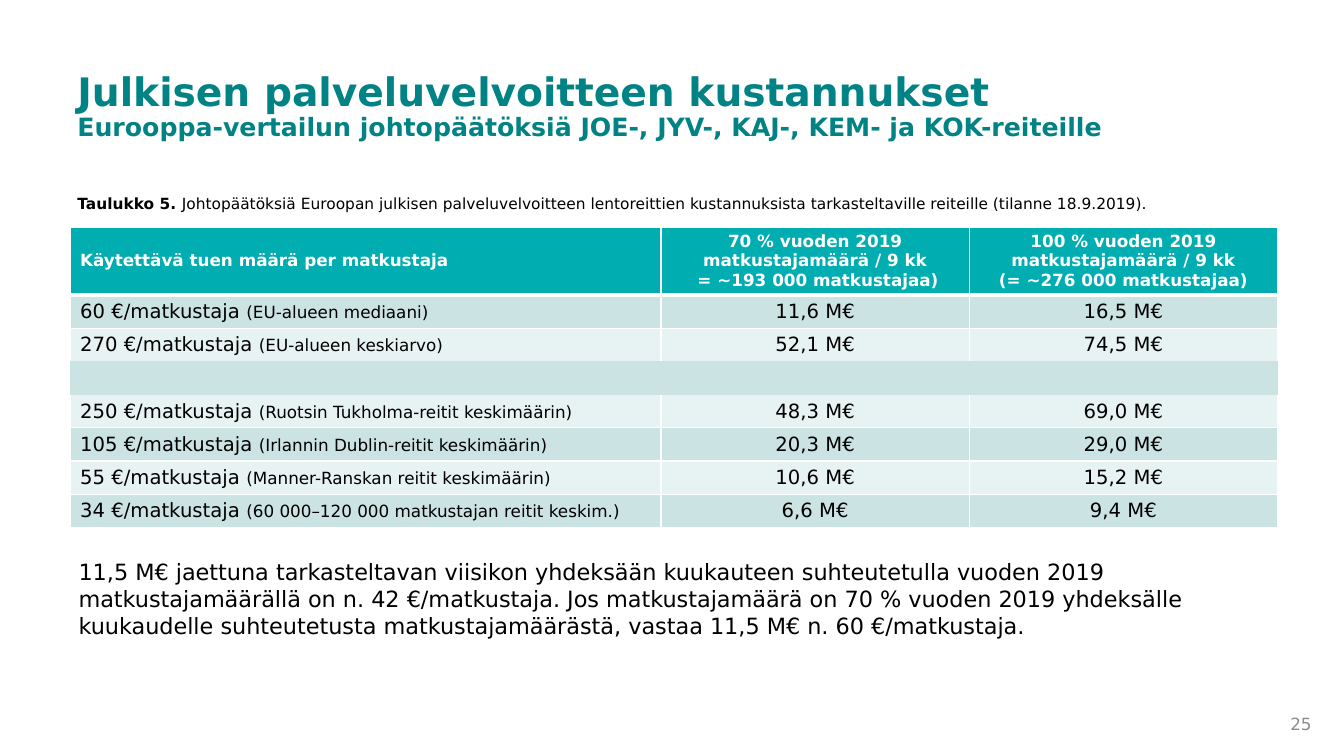
from dataclasses import dataclass

from lxml import etree
from pptx import Presentation
from pptx import util as u
from pptx.dml.color import RGBColor
from pptx.enum import text as t
from pptx.oxml import ns

Pt = u.Pt
FONT = "DejaVu Sans"
DARK = RGBColor(0x01, 0x82, 0x85)
TEAL = RGBColor(0x00, 0xAE, 0xB2)
BAND = RGBColor(0xCC, 0xE3, 0xE4)
PALE = RGBColor(0xE7, 0xF2, 0xF2)
WHITE = RGBColor(0xFF, 0xFF, 0xFF)
BLACK = RGBColor(0x00, 0x00, 0x00)
GREY = RGBColor(0x8C, 0x8C, 0x8C)
LEFT, MID, RIGHT = t.PP_ALIGN.LEFT, t.PP_ALIGN.CENTER, t.PP_ALIGN.RIGHT


@dataclass
class Line:
    rate: str = ""
    note: str = ""
    low: str = ""
    full: str = ""


HEADS = (
    "Käytettävä tuen määrä per matkustaja",
    "70 % vuoden 2019 matkustajamäärä / 9 kk\n = ~193 000 matkustajaa)",
    "100 % vuoden 2019 matkustajamäärä / 9 kk\n(= ~276 000 matkustajaa)",
)
LINES = (
    Line("60 €/matkustaja ", "(EU-alueen mediaani)", "11,6 M€", "16,5 M€"),
    Line("270 €/matkustaja ", "(EU-alueen keskiarvo)", "52,1 M€", "74,5 M€"),
    Line(),
    Line("250 €/matkustaja ", "(Ruotsin Tukholma-reitit keskimäärin)", "48,3 M€", "69,0 M€"),
    Line("105 €/matkustaja ", "(Irlannin Dublin-reitit keskimäärin)", "20,3 M€", "29,0 M€"),
    Line("55 €/matkustaja ", "(Manner-Ranskan reitit keskimäärin)", "10,6 M€", "15,2 M€"),
    Line("34 €/matkustaja ", "(60 000–120 000 matkustajan reitit keskim.)", "6,6 M€", "9,4 M€"),
)
WIDTHS = (422.2, 220.2, 220.2)
HEAD_H, ROW_H = 48.6, 23.7


def write(para, text: str, size: float = 14, color: RGBColor = BLACK,
          bold: bool = False, align=LEFT) -> None:
    para.alignment = align
    for i, part in enumerate(text.split("\n")):
        if i:
            para.add_line_break()
        if part:
            run = para.add_run()
            run.text = part
            run.font.name = FONT
            run.font.size = Pt(size)
            run.font.bold = bold
            run.font.color.rgb = color


def box(slide, x: float, y: float, w: float, h: float, anchor=t.MSO_ANCHOR.TOP):
    frame = slide.shapes.add_textbox(Pt(x), Pt(y), Pt(w), Pt(h)).text_frame
    frame.word_wrap = True
    frame.vertical_anchor = anchor
    return frame.paragraphs[0]


def edge(cell, sides: dict[str, float]) -> None:
    props = cell._tc.get_or_add_tcPr()
    for i, side in enumerate("LRTB"):
        width = sides.get(side, 0)
        line = etree.Element(ns.qn(f"a:ln{side}"), w=str(int(Pt(width))))
        if width:
            fill = etree.SubElement(line, ns.qn("a:solidFill"))
            etree.SubElement(fill, ns.qn("a:srgbClr"), val=str(WHITE))
        else:
            etree.SubElement(line, ns.qn("a:noFill"))
        props.insert(i, line)


def style(cell, fill: RGBColor, sides: dict[str, float]) -> None:
    cell.fill.solid()
    cell.fill.fore_color.rgb = fill
    cell.vertical_anchor = t.MSO_ANCHOR.MIDDLE
    cell.margin_top = cell.margin_bottom = Pt(0)
    edge(cell, sides)


def borders(row: int) -> dict[str, float]:
    gap = 1 + LINES.index(Line())
    if row == gap:
        return {}
    return {
        "L": 1,
        "R": 1,
        "T": 0 if row == gap + 1 else 3 if row == 1 else 1,
        "B": 0 if row == gap - 1 else 3 if row == 0 else 1,
    }


def costs(slide) -> None:
    rows = len(LINES) + 1
    grid = slide.shapes.add_table(
        rows, len(WIDTHS), Pt(50), Pt(162.2), Pt(sum(WIDTHS)),
        Pt(HEAD_H + ROW_H * len(LINES))).table
    for col, width in zip(grid.columns, WIDTHS):
        col.width = Pt(width)
    for r in range(rows):
        grid.rows[r].height = Pt(ROW_H if r else HEAD_H)
        fill = TEAL if r == 0 else BAND if r % 2 else PALE
        for c in range(len(WIDTHS)):
            style(grid.cell(r, c), fill, borders(r))
    for c, head in enumerate(HEADS):
        write(grid.cell(0, c).text_frame.paragraphs[0], head, size=12,
              color=WHITE, bold=True, align=MID if c else LEFT)
    for r, line in enumerate(LINES, 1):
        first, low, full = (grid.cell(r, c).text_frame.paragraphs[0] for c in range(3))
        write(first, line.rate)
        write(first, line.note, size=12)
        write(low, line.low, align=MID)
        write(full, line.full, align=MID)


def main() -> None:
    deck = Presentation()
    deck.slide_width, deck.slide_height = Pt(960), Pt(540)
    slide = deck.slides.add_slide(deck.slide_layouts[6])

    title = box(slide, 48.2, 48.2, 846, 87)
    title.line_spacing = 0.9
    write(title, "Julkisen palveluvelvoitteen kustannukset\n", size=28, color=DARK, bold=True)
    write(title, "Eurooppa-vertailun johtopäätöksiä JOE-, JYV-, KAJ-, KEM- ja KOK-reiteille",
          size=18, color=DARK, bold=True)

    page = box(slide, 890, 507, 54, 20, t.MSO_ANCHOR.MIDDLE)
    write(page, "25", size=12, color=GREY, align=RIGHT)

    costs(slide)

    body = box(slide, 49, 395.3, 862.6, 65.5)
    write(body, "11,5 M€ jaettuna tarkasteltavan viisikon yhdeksään kuukauteen suhteutetulla "
          "vuoden 2019 matkustajamäärällä on n. 42 €/matkustaja. Jos matkustajamäärä on 70 % "
          "vuoden 2019 yhdeksälle kuukaudelle suhteutetusta matkustajamäärästä, vastaa "
          "11,5 M€ n. 60 €/matkustaja.", size=16)

    label = box(slide, 48.2, 135.4, 895.7, 20.6)
    write(label, "Taulukko 5. ", size=11, bold=True)
    write(label, "Johtopäätöksiä Euroopan julkisen palveluvelvoitteen lentoreittien "
          "kustannuksista tarkasteltaville reiteille (tilanne 18.9.2019).", size=11)

    deck.save("out.pptx")


if __name__ == "__main__":
    main()
